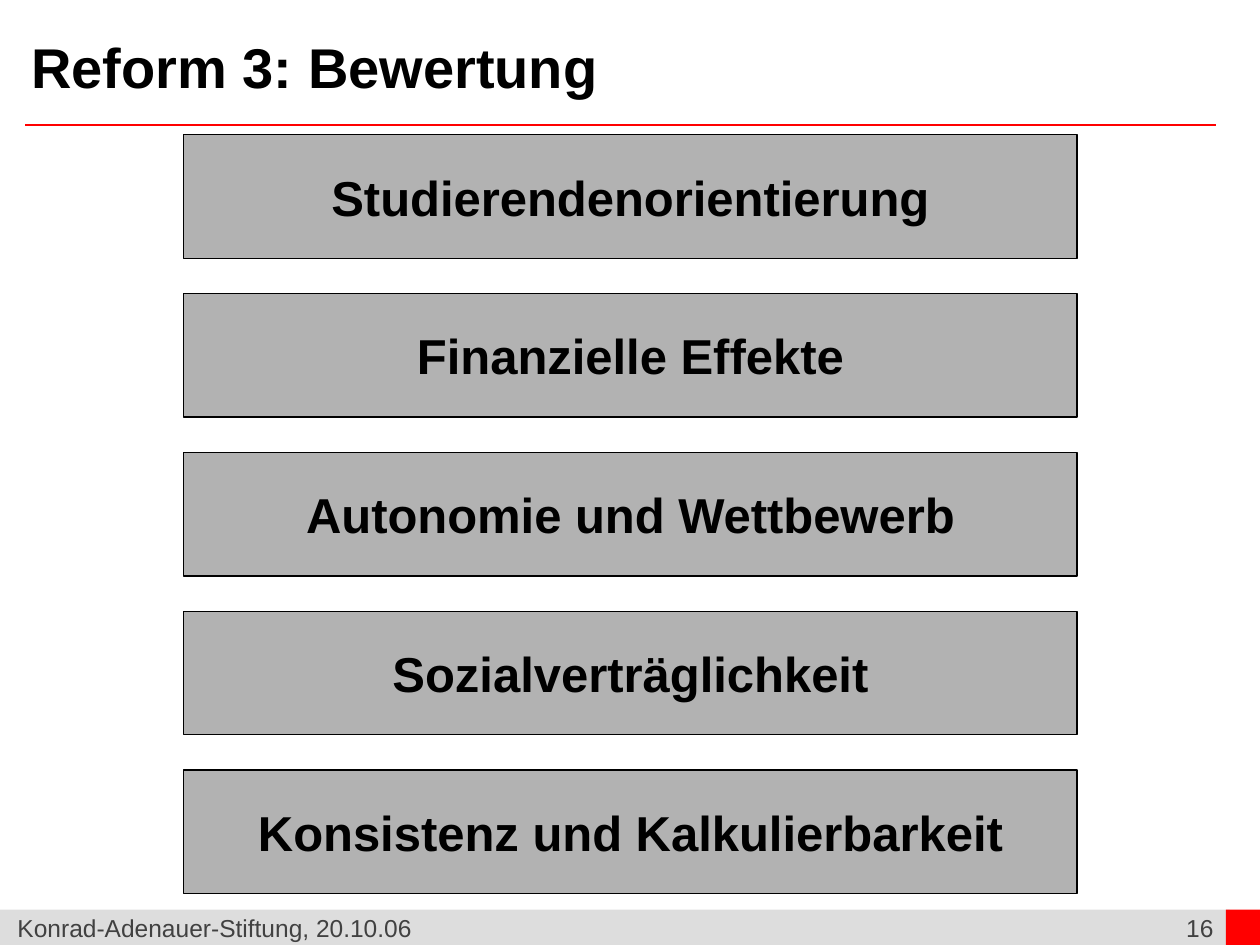
from dataclasses import dataclass

import pptx
import pptx.dml.color
import pptx.enum.shapes
import pptx.enum.text
import pptx.oxml.ns
import pptx.util
from lxml import etree

Pt = pptx.util.Pt
Color = pptx.dml.color.RGBColor
Align = pptx.enum.text.PP_ALIGN
Anchor = pptx.enum.text.MSO_ANCHOR


@dataclass(frozen=True)
class Theme:
    font: str = "Arial"
    ink: str = "000000"
    footer_ink: str = "414141"
    footer_fill: str = "DDDDDD"
    accent: str = "FF0000"
    criterion_fill: str = "B2B2B2"
    title_size: int = 32
    criterion_size: int = 28
    footer_size: int = 14


@dataclass(frozen=True)
class Area:
    """Position and size in points."""
    left: float
    top: float
    width: float
    height: float

    def lengths(self) -> tuple:
        return Pt(self.left), Pt(self.top), Pt(self.width), Pt(self.height)


@dataclass(frozen=True)
class Label:
    text: str
    size: int
    color: str
    bold: bool = False
    align: Align = Align.LEFT


THEME = Theme()
CRITERIA = (
    "Studierendenorientierung",
    "Finanzielle Effekte",
    "Autonomie und Wettbewerb",
    "Sozialverträglichkeit",
    "Konsistenz und Kalkulierbarkeit",
)
FIRST_CRITERION = Area(105, 77, 510.5, 70.6)
CRITERION_PITCH = 90.75


def write_label(frame, label: Label) -> None:
    para = frame.paragraphs[0]
    para.text = label.text
    para.alignment = label.align
    para.font.name = THEME.font
    para.font.size = Pt(label.size)
    para.font.bold = label.bold
    para.font.color.rgb = Color.from_string(label.color)


def add_text(page, area: Area, label: Label) -> None:
    box = page.shapes.add_textbox(*area.lengths())
    box.text_frame.word_wrap = True
    write_label(box.text_frame, label)


def add_rectangle(page, area: Area, fill: str):
    box = page.shapes.add_shape(
        pptx.enum.shapes.MSO_SHAPE.RECTANGLE, *area.lengths())
    box.shadow.inherit = False
    box.fill.solid()
    box.fill.fore_color.rgb = Color.from_string(fill)
    box.line.fill.background()
    return box


def add_criterion(page, area: Area, text: str) -> None:
    box = add_rectangle(page, area, THEME.criterion_fill)
    box.line.color.rgb = Color.from_string(THEME.ink)
    box.line.width = Pt(0.75)
    box.text_frame.word_wrap = False
    box.text_frame.vertical_anchor = Anchor.MIDDLE
    write_label(box.text_frame, Label(
        text, THEME.criterion_size, THEME.ink, True, Align.CENTER))


def add_rule(page, left: float, right: float, y: float) -> None:
    rule = page.shapes.add_connector(
        pptx.enum.shapes.MSO_CONNECTOR.STRAIGHT,
        Pt(left), Pt(y), Pt(right), Pt(y))
    rule.line.color.rgb = Color.from_string(THEME.accent)
    rule.line.width = Pt(1)
    etree.SubElement(rule._element.spPr, pptx.oxml.ns.qn("a:effectLst"))


def main() -> None:
    deck = pptx.Presentation()
    deck.slide_width, deck.slide_height = Pt(720), Pt(540)
    page = deck.slides.add_slide(deck.slide_layouts[6])

    # Footer bar, title rule and red corner
    add_rectangle(page, Area(0, 519.8, 702.7, 20.2), THEME.footer_fill)
    add_rule(page, 14.4, 694.8, 71.4)
    add_rectangle(page, Area(700.5, 519.8, 19.5, 20.2), THEME.accent)

    # Footer texts
    add_text(page, Area(638, 518.4, 62.5, 24), Label(
        "16", THEME.footer_size, THEME.footer_ink, align=Align.RIGHT))
    add_text(page, Area(2.9, 518.4, 638, 41), Label(
        "Konrad-Adenauer-Stiftung, 20.10.06",
        THEME.footer_size, THEME.footer_ink))

    # Title
    add_text(page, Area(10.8, 15.1, 570, 45.4), Label(
        "Reform 3: Bewertung", THEME.title_size, THEME.ink, bold=True))

    # Stack of criteria
    for row, text in enumerate(CRITERIA):
        area = Area(FIRST_CRITERION.left,
                    FIRST_CRITERION.top + row * CRITERION_PITCH,
                    FIRST_CRITERION.width, FIRST_CRITERION.height)
        add_criterion(page, area, text)

    deck.save("out.pptx")


if __name__ == "__main__":
    main()
